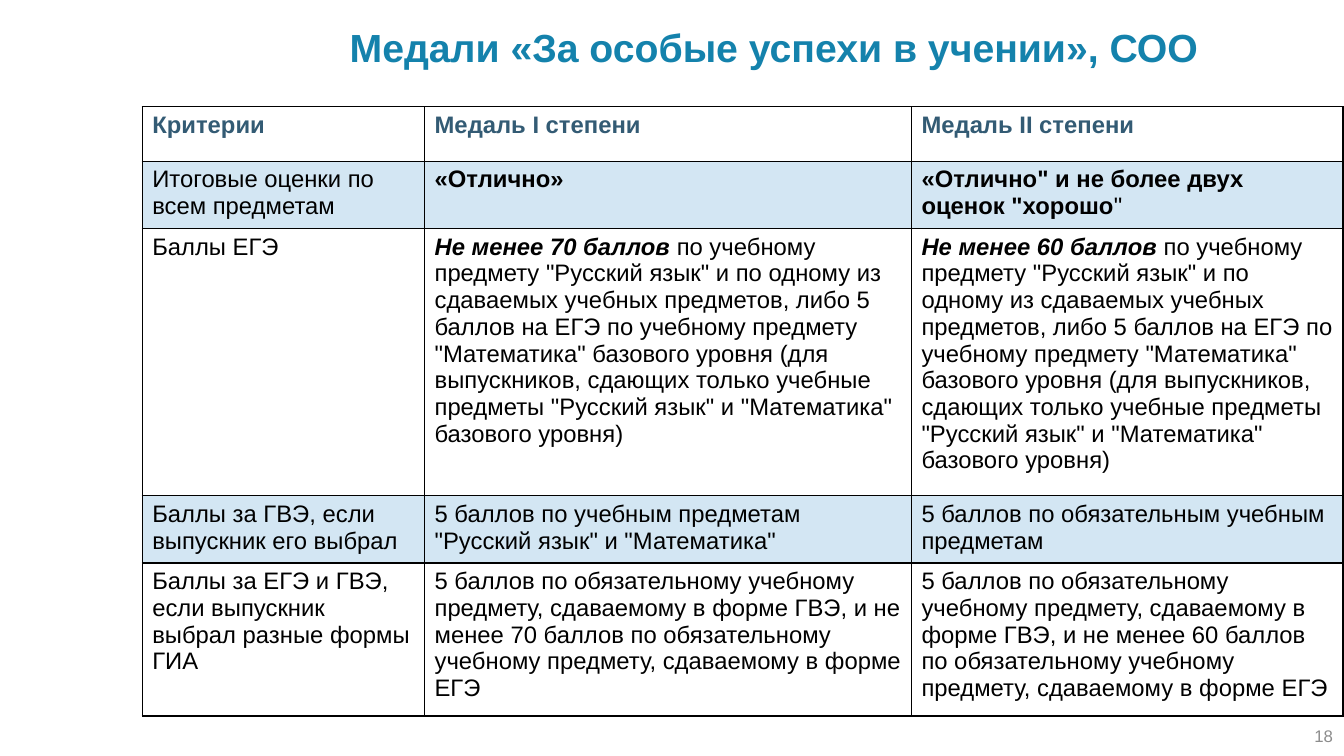
from dataclasses import dataclass

from lxml.etree import SubElement
from pptx import Presentation
from pptx.dml.color import RGBColor
from pptx.enum.text import MSO_ANCHOR, PP_ALIGN
from pptx.oxml import parse_xml
from pptx.oxml.ns import nsdecls, qn
from pptx.slide import Slide
from pptx.table import _Cell
from pptx.text.text import Font, _Paragraph
from pptx.util import Inches, Length, Pt

WIDTH, HEIGHT = Inches(13.33), Inches(7.5)
FONT = "Arial"
TITLE_BLUE = RGBColor(0x14, 0x82, 0xAC)
HEADER_BLUE = RGBColor(0x33, 0x5B, 0x74)
BAND_BLUE = RGBColor(0x26, 0x83, 0xC6)
GREY = RGBColor(0x8C, 0x8C, 0x8C)
BLACK = RGBColor(0x00, 0x00, 0x00)
BAND_OPACITY = 20  # percent

# Table grid in percent of the slide
TABLE_LEFT, TABLE_TOP = 10.58, 14.13
COLUMN_SHARES = (21.01, 36.23, 32.11)
ROW_SHARE = 7.2


@dataclass(frozen=True)
class Span:
    text: str
    bold: bool = False
    italic: bool = False


@dataclass(frozen=True)
class Label:
    text: str
    left: float
    top: float
    width: float
    height: float
    size: int
    color: RGBColor
    alignment: PP_ALIGN
    anchor: MSO_ANCHOR
    bold: bool = False
    first_line: float = 0


@dataclass(frozen=True)
class Row:
    cells: tuple[tuple[Span, ...], ...]
    color: RGBColor = BLACK
    banded: bool = False


def across(percent: float) -> Length:
    return Length(round(WIDTH * percent / 100))


def down(percent: float) -> Length:
    return Length(round(HEIGHT * percent / 100))


def plain(*texts: str, bold: bool = False) -> tuple[tuple[Span, ...], ...]:
    return tuple((Span(text, bold),) for text in texts)


def exam_score(points: int) -> tuple[Span, ...]:
    return (
        Span(f"Не менее {points} баллов ", bold=True, italic=True),
        Span(
            'по учебному предмету "Русский язык" и по одному из сдаваемых учебных '
            'предметов, либо 5 баллов на ЕГЭ по учебному предмету "Математика" '
            "базового уровня (для выпускников, сдающих только учебные предметы "
            '"Русский язык" и "Математика" базового уровня)'
        ),
    )


def mixed_score(points: int) -> tuple[Span, ...]:
    return (
        Span(
            "5 баллов по обязательному учебному предмету, сдаваемому в форме ГВЭ, "
            f"и не менее {points} баллов по обязательному учебному предмету, "
            "сдаваемому в форме ЕГЭ"
        ),
    )


LABELS = (
    Label("18", 82.45, 94.67, 17.48, 5.33, 12, GREY, PP_ALIGN.RIGHT, MSO_ANCHOR.MIDDLE),
    Label("Медали «За особые успехи в учении», СОО", 23.18, 2.4, 68.04, 7.6, 28,
          TITLE_BLUE, PP_ALIGN.JUSTIFY, MSO_ANCHOR.TOP, bold=True, first_line=2.1),
)

ROWS = (
    Row(plain("Критерии", "Медаль I степени", "Медаль II степени", bold=True), HEADER_BLUE),
    Row(
        (
            (Span("Итоговые оценки по всем предметам"),),
            (Span("«Отлично»", bold=True),),
            (Span('«Отлично" и не более двух оценок "хорошо', bold=True), Span('"')),
        ),
        banded=True,
    ),
    Row((*plain("Баллы ЕГЭ"), exam_score(70), exam_score(60))),
    Row(
        plain(
            "Баллы за ГВЭ, если выпускник его выбрал",
            '5 баллов по учебным предметам "Русский язык" и "Математика"',
            "5 баллов по обязательным учебным предметам",
        ),
        banded=True,
    ),
    Row((
        *plain("Баллы за ЕГЭ и ГВЭ, если выпускник выбрал разные формы ГИА"),
        mixed_score(70),
        mixed_score(60),
    )),
)


def style_font(font: Font, size: int, color: RGBColor, bold: bool) -> None:
    font.name = FONT
    font.size = Pt(size)
    font.bold = bold
    font.color.rgb = color


def add_label(slide: Slide, label: Label) -> None:
    box = slide.shapes.add_textbox(
        across(label.left), down(label.top), across(label.width), down(label.height)
    )
    frame = box.text_frame
    frame.word_wrap = True
    frame.vertical_anchor = label.anchor
    frame.text = label.text
    paragraph = frame.paragraphs[0]
    paragraph.alignment = label.alignment
    if label.first_line:
        paragraph._p.get_or_add_pPr().set("indent", str(across(label.first_line)))
    style_font(paragraph.runs[0].font, label.size, label.color, label.bold)


def add_spans(paragraph: _Paragraph, spans: tuple[Span, ...], color: RGBColor) -> None:
    for span in spans:
        run = paragraph.add_run()
        run.text = span.text
        style_font(run.font, 17, color, span.bold)
        run.font.italic = span.italic


def fill_cell(cell: _Cell, banded: bool) -> None:
    if not banded:
        cell.fill.background()
        return
    cell.fill.solid()
    cell.fill.fore_color.rgb = BAND_BLUE
    color = next(cell._tc.tcPr.iter(qn("a:srgbClr")))
    SubElement(color, qn("a:alpha")).set("val", str(BAND_OPACITY * 1000))


def border_cell(cell: _Cell) -> None:
    for position, side in enumerate(("lnL", "lnR", "lnT", "lnB")):
        line = parse_xml(
            f'<a:{side} {nsdecls("a")} w="{Pt(1)}"><a:solidFill>'
            f'<a:srgbClr val="{BLACK}"/></a:solidFill></a:{side}>'
        )
        cell._tc.get_or_add_tcPr().insert(position, line)


def add_criteria_table(slide: Slide) -> None:
    table = slide.shapes.add_table(
        len(ROWS), len(COLUMN_SHARES), across(TABLE_LEFT), down(TABLE_TOP),
        across(sum(COLUMN_SHARES)), down(ROW_SHARE * len(ROWS)),
    ).table
    table.first_row = False
    table.horz_banding = False
    for column, share in zip(table.columns, COLUMN_SHARES):
        column.width = across(share)
    for table_row, row in zip(table.rows, ROWS):
        for cell, spans in zip(table_row.cells, row.cells):
            add_spans(cell.text_frame.paragraphs[0], spans, row.color)
            fill_cell(cell, row.banded)
            border_cell(cell)


def main() -> None:
    presentation = Presentation()
    presentation.slide_width, presentation.slide_height = WIDTH, HEIGHT
    slide = presentation.slides.add_slide(presentation.slide_layouts[6])

    # Page number, table, then title
    number, title = LABELS
    add_label(slide, number)
    add_criteria_table(slide)
    add_label(slide, title)
    presentation.save("out.pptx")


if __name__ == "__main__":
    main()
